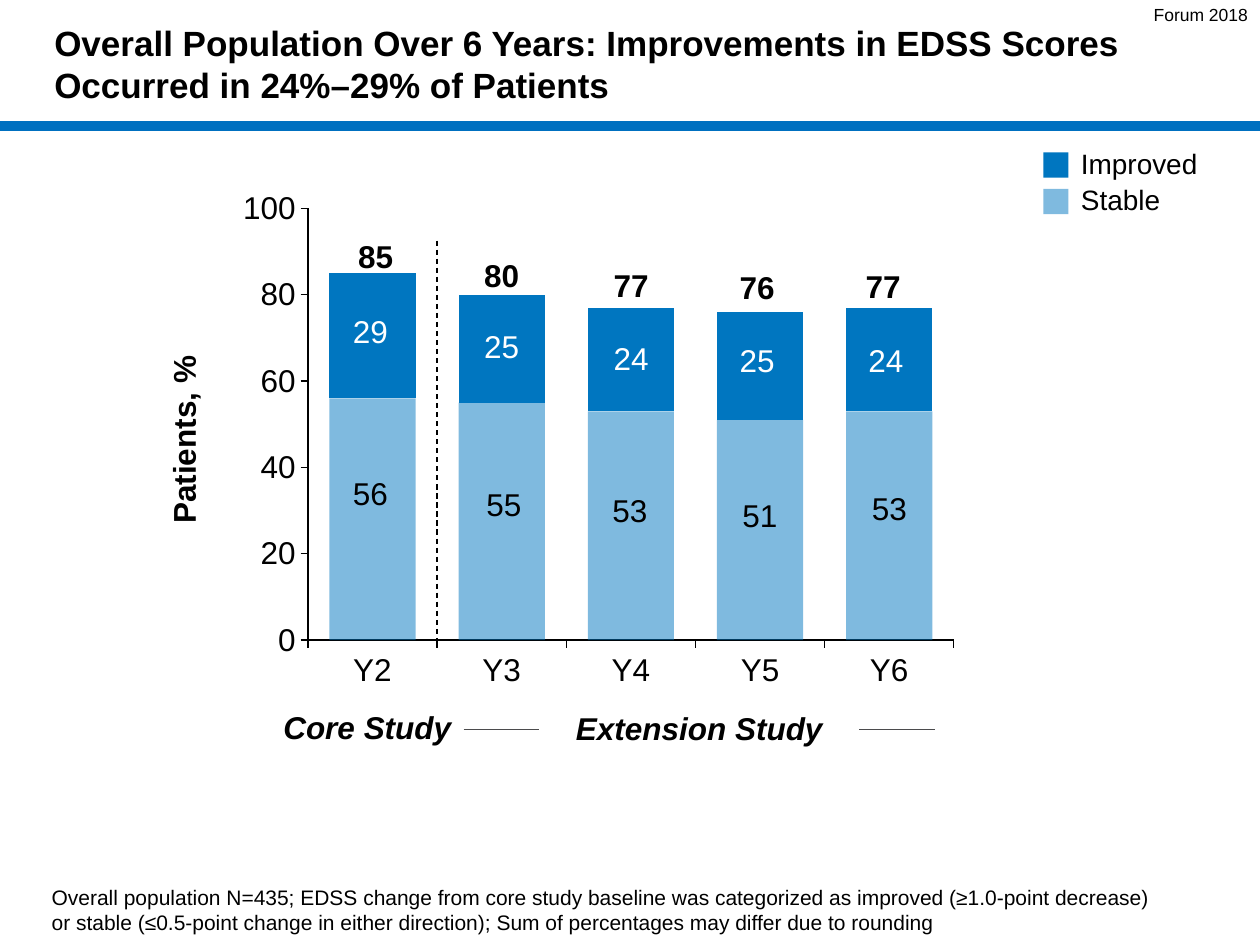
from dataclasses import dataclass

from lxml.etree import SubElement
from pptx import Presentation
from pptx.chart.data import CategoryChartData
from pptx.dml.color import RGBColor
from pptx.enum.chart import XL_CHART_TYPE as ChartType, XL_TICK_MARK as Tick
from pptx.enum.dml import MSO_LINE as Dash
from pptx.enum.shapes import MSO_CONNECTOR as Connector, MSO_SHAPE as Preset
from pptx.enum.text import MSO_ANCHOR as Anchor, MSO_AUTO_SIZE as AutoSize, PP_ALIGN as Align
from pptx.oxml import parse_xml
from pptx.oxml.ns import nsdecls, qn
from pptx.util import Pt

BLACK = RGBColor(0x00, 0x00, 0x00)
WHITE = RGBColor(0xFF, 0xFF, 0xFF)
BLUE = RGBColor(0x00, 0x76, 0xC0)
RULE_BLUE = RGBColor(0x00, 0x70, 0xC0)
GRAY = RGBColor(0x4B, 0x4B, 0x4D)
FONT = "Arial"


@dataclass
class Label:
    text: str
    left: float
    top: float
    width: float = 72
    height: float = 28.8
    size: float = 18
    color: RGBColor = BLACK
    bold: bool = False
    italic: bool = False
    align: Align = Align.CENTER
    rotation: float = 0


@dataclass
class Rule:
    x1: float
    y1: float
    x2: float
    y2: float
    color: RGBColor = BLACK
    weight: float = 0.75
    dashed: bool = False


@dataclass
class Mark:
    """A number on a column and the corner of its box."""
    value: int
    left: float
    top: float


YEARS = ["Y2", "Y3", "Y4", "Y5", "Y6"]
STABLE = [Mark(56, 175.7, 267.1), Mark(55, 252, 273.6), Mark(53, 324, 277.2),
          Mark(51, 398.2, 280.1), Mark(53, 472.3, 275.8)]
IMPROVED = [Mark(29, 175.7, 175), Mark(25, 250.6, 183.6), Mark(24, 324.7, 190.1),
            Mark(25, 396.7, 191.5), Mark(24, 470.2, 191.5)]
TOTALS = [Mark(85, 178.6, 131.8), Mark(80, 250.6, 142.6), Mark(77, 324.7, 148.3),
          Mark(76, 396.7, 149.8), Mark(77, 468.7, 149)]


def style_font(font, size: float, color: RGBColor = BLACK,
               bold: bool = False, italic: bool = False) -> None:
    font.name, font.size, font.bold, font.italic = FONT, Pt(size), bold, italic
    font.color.rgb = color


def fill_blue(fill, opacity: int) -> None:
    fill.solid()
    fill.fore_color.rgb = BLUE
    if opacity < 100:
        color = fill._xPr.find(".//" + qn("a:srgbClr"))
        SubElement(color, qn("a:alpha"), val=str(opacity * 1000))


def place(shape, left: float, top: float, width: float, height: float) -> None:
    shape.left, shape.top = Pt(left), Pt(top)
    shape.width, shape.height = Pt(width), Pt(height)


def add_label(page, label: Label) -> None:
    box = page.shapes.add_textbox(Pt(label.left), Pt(label.top), Pt(label.width), Pt(label.height))
    box.rotation = label.rotation
    frame = box.text_frame
    frame.word_wrap = True
    frame.text = label.text
    para = frame.paragraphs[0]
    para.alignment = label.align
    style_font(para.runs[0].font, label.size, label.color, label.bold, label.italic)


def add_rule(page, rule: Rule) -> None:
    line = page.shapes.add_connector(
        Connector.STRAIGHT, Pt(rule.x1), Pt(rule.y1), Pt(rule.x2), Pt(rule.y2))
    line.line.color.rgb = rule.color
    line.line.width = Pt(rule.weight)
    if rule.dashed:
        line.line.dash_style = Dash.DASH
    SubElement(line._element.spPr, qn("a:effectLst"))


def fill_placeholder(shape, text: str, size: float, bold: bool, anchor: Anchor) -> None:
    frame = shape.text_frame
    frame.text = text
    frame.word_wrap = True
    frame.auto_size = AutoSize.NONE
    frame.vertical_anchor = anchor
    para = frame.paragraphs[0]
    para.alignment = Align.LEFT
    para.space_before = Pt(0)
    style_font(para.runs[0].font, size, bold=bold)
    properties = para._p.get_or_add_pPr()
    properties.set("marL", "0")
    properties.set("indent", "0")
    SubElement(properties, qn("a:buNone"))


def add_column_chart(page) -> None:
    data = CategoryChartData(number_format="0")
    data.categories = YEARS
    data.add_series("Stable", [mark.value for mark in STABLE])
    data.add_series("Improved", [mark.value for mark in IMPROVED])
    chart = page.shapes.add_chart(
        ChartType.COLUMN_STACKED, Pt(105.1), Pt(103), Pt(509.8), Pt(309.6), data).chart
    chart.has_legend = chart.has_title = False
    style_font(chart.font, 18)

    plot = chart.plots[0]
    plot.gap_width, plot.overlap = 50, 100
    for series, opacity in zip(plot.series, (50, 100)):
        fill_blue(series.format.fill, opacity)

    for axis in (chart.category_axis, chart.value_axis):
        axis.has_major_gridlines = False
        axis.major_tick_mark = Tick.OUTSIDE
        axis.format.line.color.rgb = BLACK
        axis.format.line.width = Pt(0.75)
        style_font(axis.tick_labels.font, 18)
    scale = chart.value_axis
    scale.minimum_scale, scale.maximum_scale, scale.major_unit = 0, 100, 20

    # Fixed inner plot area
    area = chart._chartSpace.chart.plotArea
    for old in area.findall(qn("c:layout")):
        area.remove(old)
    sizes = "".join(f'<c:{key} val="{value}"/>' for key, value in
                    (("x", 0.139), ("y", 0.052), ("w", 0.724), ("h", 0.797)))
    area.insert(0, parse_xml(
        f'<c:layout {nsdecls("c")}><c:manualLayout><c:layoutTarget val="inner"/>'
        f'<c:xMode val="edge"/><c:yMode val="edge"/>{sizes}</c:manualLayout></c:layout>'))


def add_legend_entry(page, name: str, opacity: int, top: float) -> None:
    swatch = page.shapes.add_shape(Preset.RECTANGLE, Pt(596.2), Pt(top), Pt(14.4), Pt(14.4))
    swatch.shadow.inherit = False
    swatch.line.fill.background()
    fill_blue(swatch.fill, opacity)
    add_label(page, Label(name, 610.6, top - 7, 104.4, 26.6, size=16, align=Align.LEFT))


def main() -> None:
    deck = Presentation()
    deck.slide_width, deck.slide_height = Pt(720), Pt(540)
    page = deck.slides.add_slide(deck.slide_layouts[1])

    # Title and footnote
    title, note = page.shapes.title, page.placeholders[1]
    place(title, 23.8, 0, 648.7, 72)
    fill_placeholder(title, "Overall Population Over 6 Years: Improvements in EDSS Scores "
                     "Occurred in 24%–29% of Patients", 20, True, Anchor.MIDDLE)
    place(note, 22.3, 503.3, 649.4, 34.6)
    fill_placeholder(note, "Overall population N=435; EDSS change from core study baseline was "
                     "categorized as improved (≥1.0-point decrease) or stable (≤0.5-point change "
                     "in either direction); Sum of percentages may differ due to rounding",
                     12, False, Anchor.BOTTOM)
    add_rule(page, Rule(0, 72, 720, 72, RULE_BLUE, 5.75))
    add_label(page, Label("Forum 2018", 584.6, -1.4, 135.4, 19.4, size=10, align=Align.RIGHT))

    # Chart with its numbers
    add_column_chart(page)
    for marks, color, bold in ((TOTALS, BLACK, True), (IMPROVED, WHITE, False),
                               (STABLE, BLACK, False)):
        for mark in marks:
            add_label(page, Label(str(mark.value), mark.left, mark.top, color=color, bold=bold))
    add_label(page, Label("Patients, %", 28.1, 236.9, 153.4, bold=True, rotation=270))
    add_rule(page, Rule(249.8, 137.5, 249.8, 367.2, dashed=True))

    # Study periods
    add_label(page, Label("Core Study", 136.8, 401, 146.2, bold=True, italic=True))
    add_label(page, Label("Extension Study", 315.4, 401.8, 168.5, bold=True, italic=True))
    for left in (265, 491):
        add_rule(page, Rule(left, 416.9, left + 43.2, 416.9, GRAY, 1))

    # Legend
    add_legend_entry(page, "Improved", 100, 87.1)
    add_legend_entry(page, "Stable", 50, 108)

    deck.save("out.pptx")


if __name__ == "__main__":
    main()
